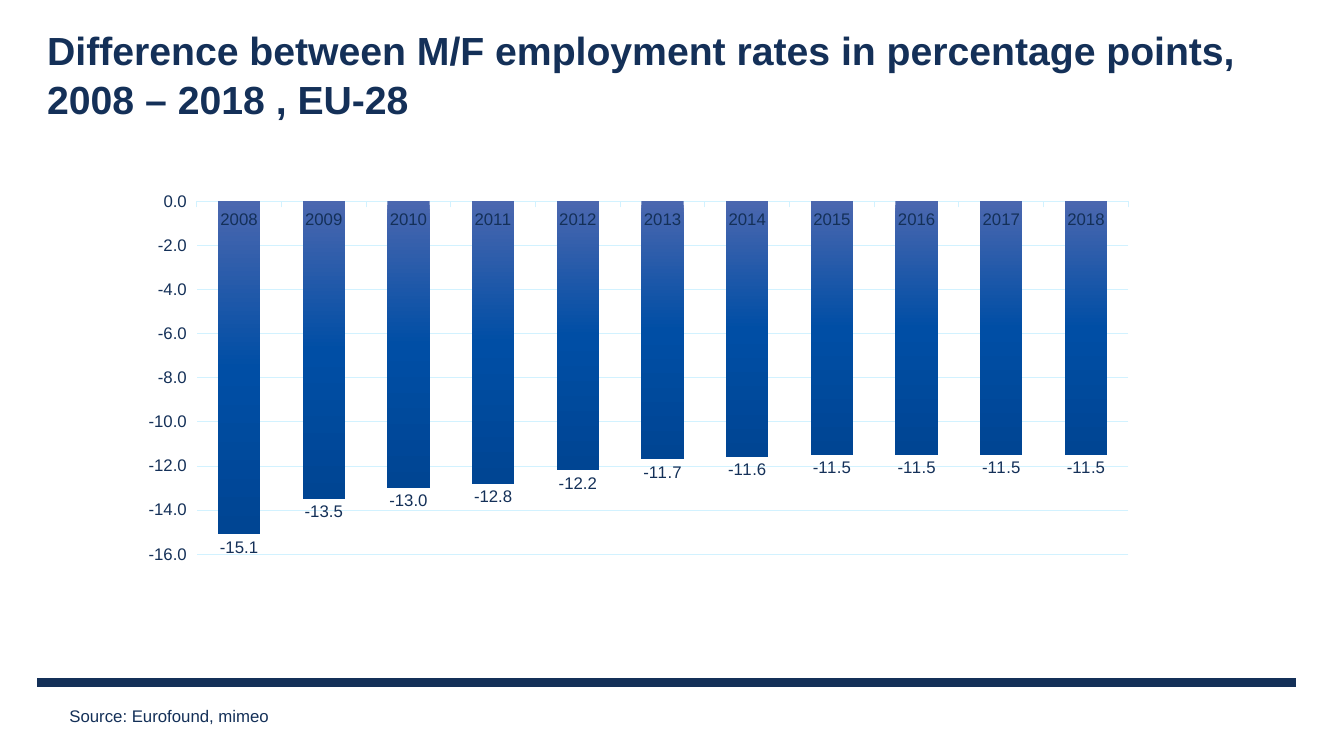
from copy import deepcopy

from lxml.etree import SubElement
from pptx import Presentation
from pptx.chart.data import CategoryChartData
from pptx.dml.color import RGBColor
from pptx.enum.chart import XL_CHART_TYPE, XL_LABEL_POSITION, XL_TICK_MARK
from pptx.enum.text import MSO_ANCHOR
from pptx.oxml.ns import qn
from pptx.util import Cm, Pt

HUES = {
    "navy": "143058",
    "grid": "D2F2FF",
    "top": "4B67AF",
    "mid": "004EA5",
    "low": "004593",
}
FONT = "Arial"
FORM = "#,##0.0"
YEARS = [str(year) for year in range(2008, 2019)]
GAPS = [-15.1, -13.5, -13, -12.8, -12.2, -11.7, -11.6] + [-11.5] * 4


class Deck:
    def __init__(self):
        self.show = Presentation()
        self.show.slide_width, self.show.slide_height = Cm(33.87), Cm(19.05)
        self.slide = self.show.slides.add_slide(self.show.slide_layouts[6])

    def hue(self, name):
        return RGBColor.from_string(HUES[name])

    def style(self, font, size, bold=False):
        font.name, font.size, font.bold = FONT, Pt(size), bold
        font.color.rgb = self.hue("navy")

    def text(self, words, box, size, bold=False, space=1.0):
        frame = self.slide.shapes.add_textbox(*map(Cm, box)).text_frame
        frame.word_wrap = True
        frame.vertical_anchor = MSO_ANCHOR.MIDDLE
        frame.text = words
        para = frame.paragraphs[0]
        para.line_spacing = space
        self.style(para.runs[0].font, size, bold)

    def rule(self, left, right, top, width):
        line = self.slide.shapes.add_connector(
            1, Cm(left), Cm(top), Cm(right), Cm(top))
        line.line.color.rgb = self.hue("navy")
        line.line.width = Pt(width)
        SubElement(line._element.spPr, qn("a:effectLst"))

    def chart(self, box, cats, vals):
        data = CategoryChartData(number_format=FORM)
        data.categories = cats
        data.add_series("Series 1", vals)
        chart = self.slide.shapes.add_chart(
            XL_CHART_TYPE.COLUMN_CLUSTERED, *map(Cm, box), data).chart
        chart.has_legend = chart.has_title = False
        self.style(chart.font, 10)
        self.axes(chart)
        self.bars(chart)
        self.place(chart, x=0.063, y=0.11, w=0.937, h=0.84)

    def axes(self, chart):
        years, scale = chart.category_axis, chart.value_axis
        for axis in (years, scale):
            axis.major_tick_mark = XL_TICK_MARK.OUTSIDE
            axis.minor_tick_mark = XL_TICK_MARK.NONE
            self.style(axis.tick_labels.font, 12)
        scale.minimum_scale, scale.maximum_scale = -16, 0
        scale.major_unit = 2
        scale.tick_labels.number_format = FORM
        scale.tick_labels.number_format_is_linked = False
        scale.format.line.fill.background()
        for line in (years.format.line, scale.major_gridlines.format.line):
            line.color.rgb = self.hue("grid")
            line.width = Pt(0.75)

    def bars(self, chart):
        plot = chart.plots[0]
        plot.gap_width, plot.overlap = 100, -24
        plot.vary_by_categories = False
        bars = plot.series[0]
        bars.invert_if_negative = False

        # Three-stop gradient, top to bottom
        fill = bars.format.fill
        fill.gradient()
        fill.gradient_angle = 270
        stops = bars._element.find(".//" + qn("a:gsLst"))
        stops.insert(1, deepcopy(stops[0]))
        for step, (stop, name) in enumerate(
                zip(fill.gradient_stops, ("top", "mid", "low"))):
            stop.position = step / 2
            stop.color.rgb = self.hue(name)

        # Value labels
        marks = bars.data_labels
        marks.show_value = True
        marks.position = XL_LABEL_POSITION.OUTSIDE_END
        marks.number_format = FORM
        marks.number_format_is_linked = False
        self.style(marks.font, 12)

    def place(self, chart, **spots):
        area = chart._chartSpace.chart.plotArea
        for old in area.findall(qn("c:layout")):
            area.remove(old)
        lay = SubElement(area, qn("c:layout"))
        area.insert(0, lay)
        spot = SubElement(lay, qn("c:manualLayout"))
        parts = {"layoutTarget": "inner", "xMode": "edge", "yMode": "edge"}
        for name, val in (parts | spots).items():
            SubElement(spot, qn("c:" + name)).set("val", str(val))


def main():
    deck = Deck()
    # Footer rule
    deck.rule(0.94, 32.66, 17.2, 6)
    # Title
    deck.text("Difference between M/F employment rates in percentage points, "
              "2008 – 2018 , EU-28",
              (0.94, 0.76, 31.72, 2.16), 28, bold=True, space=1.05)
    # Employment gap by year
    deck.chart((3.38, 3.91, 25.07, 10.59), YEARS, GAPS)
    # Source
    deck.text("Source: Eurofound, mimeo", (1.5, 17.65, 10.52, 0.76), 12)
    deck.show.save("out.pptx")


if __name__ == "__main__":
    main()
